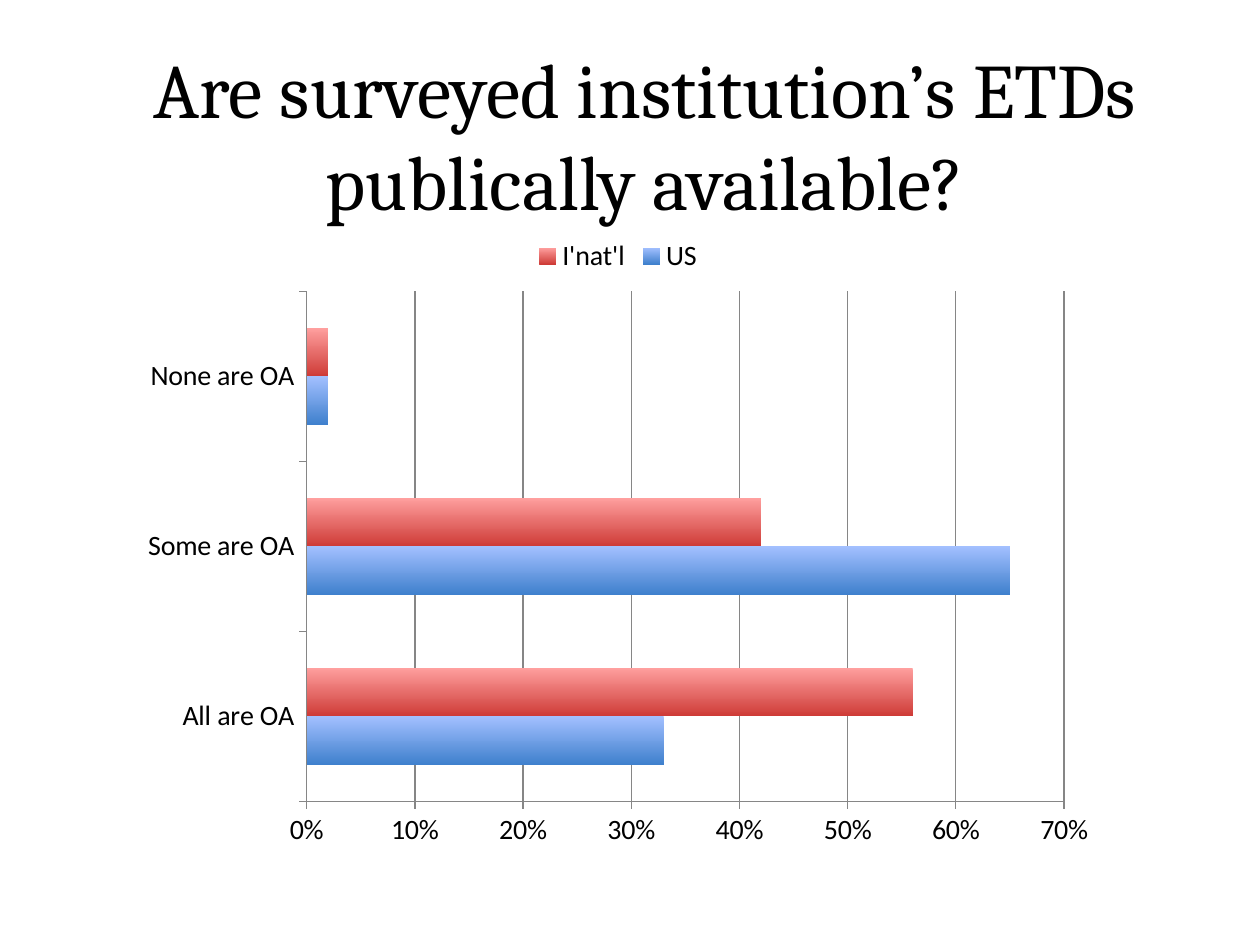
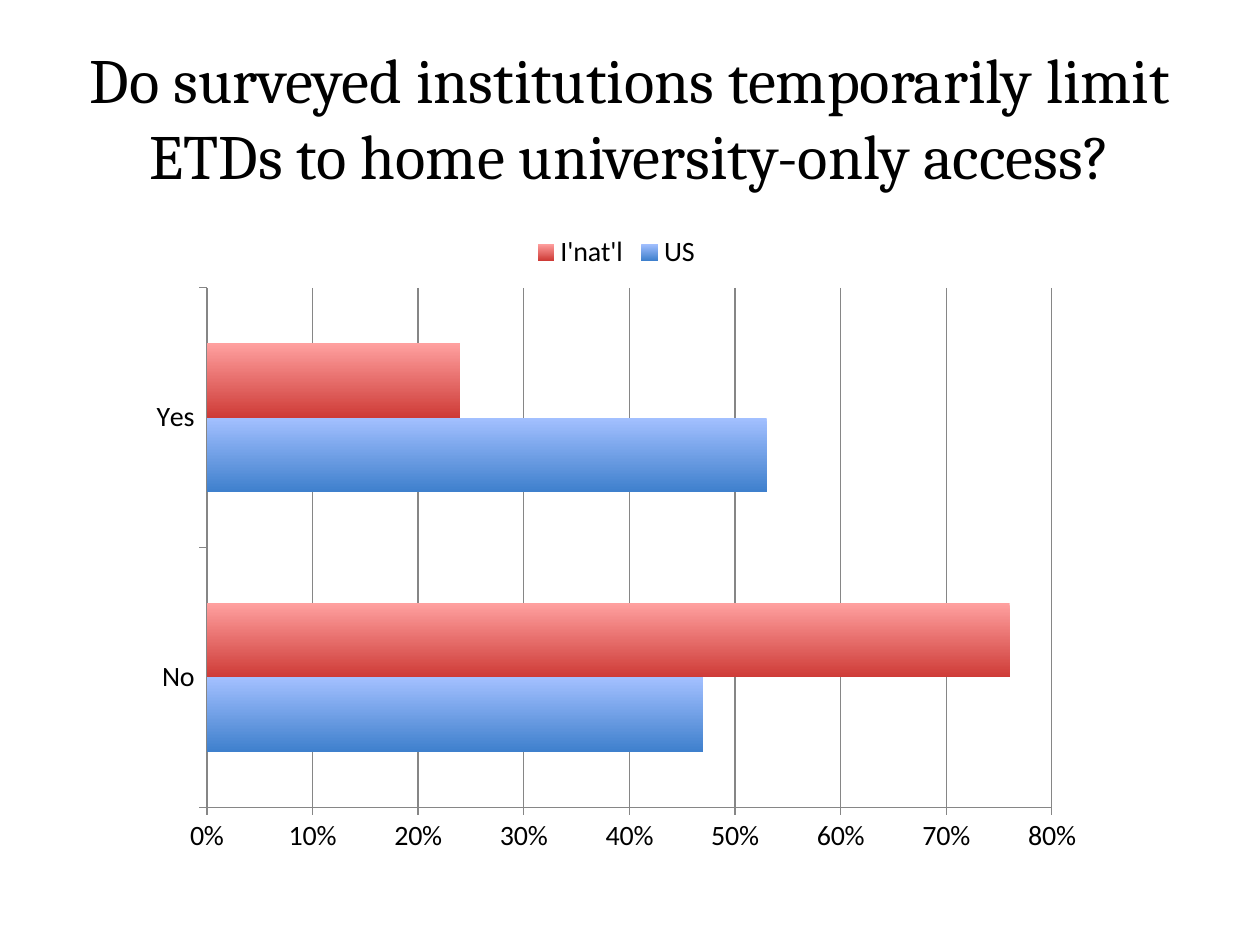
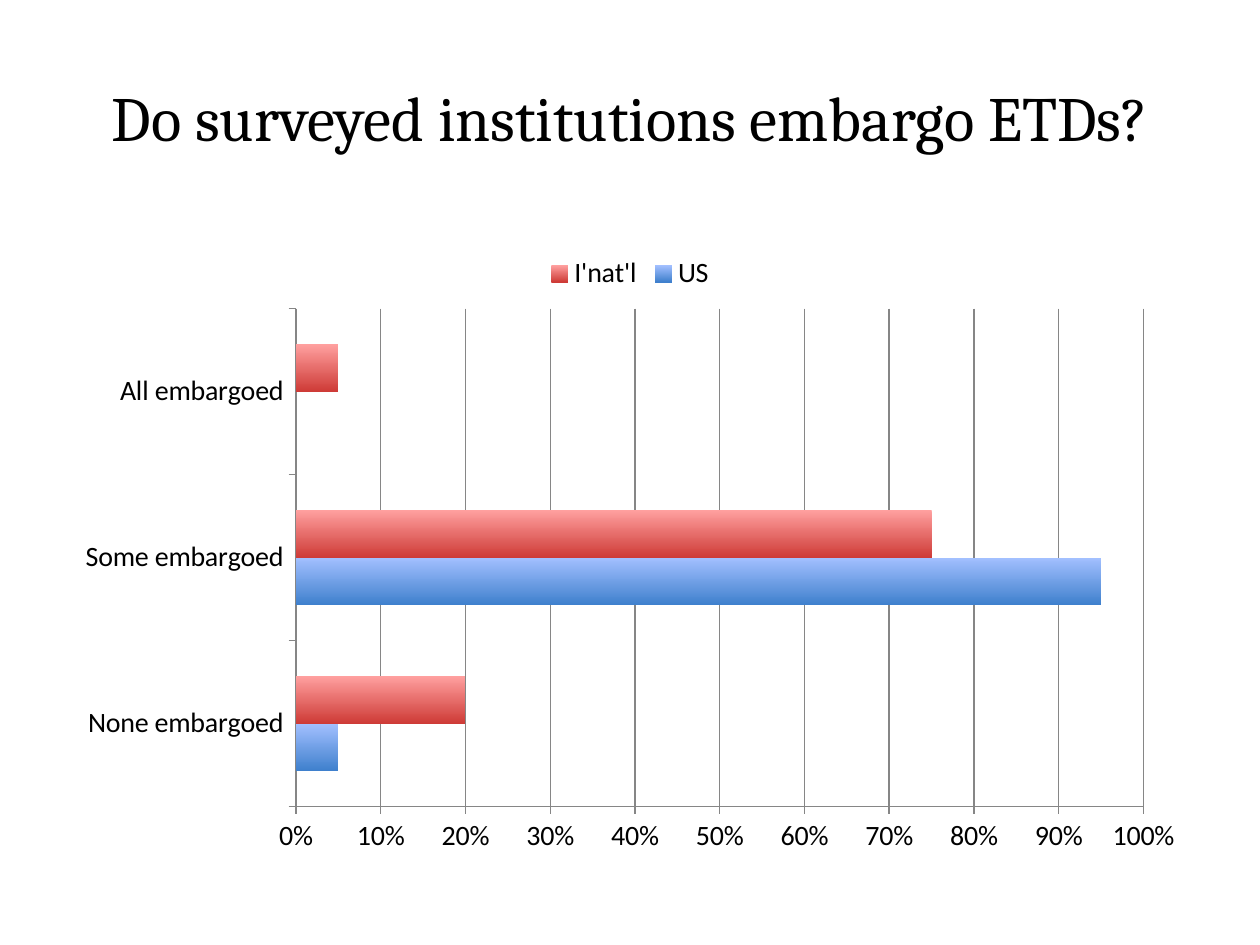
from dataclasses import dataclass

from pptx import Presentation
from pptx import util as u
from pptx.chart.data import CategoryChartData
from pptx.dml.color import RGBColor
from pptx.enum import chart as ch
from pptx.enum import text

PX = u.Inches(1) // 100
TITLE_ONLY = 5


@dataclass(frozen=True)
class Theme:
    ink: str = "000000"
    axis: str = "868686"
    us: tuple = ("A3C0FF", "3F80CD")
    international: tuple = ("FFA09F", "CE3B37")
    title_font: str = "Cambria"
    chart_font: str = "Calibri"
    title_size: int = 36
    large_title_size: int = 44
    chart_size: int = 16
    axis_width: float = 0.75


def rgb(value):
    return RGBColor.from_string(value)


class SurveyDeck:
    """Holds the presentation, its style and the slide being filled."""

    def __init__(self, theme):
        self.theme = theme
        self.deck = Presentation()
        self.deck.slide_width = 1000 * PX
        self.deck.slide_height = 750 * PX
        self.page = None

    def add_page(self):
        layout = self.deck.slide_layouts[TITLE_ONLY]
        self.page = self.deck.slides.add_slide(layout)

    def title(self, wording, size, box):
        title = self.page.shapes.title
        title.left, title.top, title.width, title.height = (n * PX for n in box)
        frame = title.text_frame
        frame.text = wording
        frame.word_wrap = True
        frame.auto_size = text.MSO_AUTO_SIZE.NONE
        frame.vertical_anchor = text.MSO_ANCHOR.MIDDLE
        para = frame.paragraphs[0]
        para.alignment = text.PP_ALIGN.CENTER
        self.style_font(para.font, self.theme.title_font, size)

    def bar_chart(self, box, answers, maximum):
        """Draw answers, a mapping of answer to (US, international) shares."""
        data = CategoryChartData(number_format="0%")
        data.categories = list(answers)
        us, international = zip(*answers.values())
        data.add_series("US", us)
        data.add_series("I'nat'l", international)
        chart = self.page.shapes.add_chart(
            ch.XL_CHART_TYPE.BAR_CLUSTERED, *(n * PX for n in box), data
        ).chart

        self.style_font(chart.font, self.theme.chart_font, self.theme.chart_size)
        chart.has_title = False
        chart.has_legend = True
        chart.legend.position = ch.XL_LEGEND_POSITION.TOP
        chart.legend.include_in_layout = False

        plot = chart.plots[0]
        plot.gap_width = 150
        plot.overlap = 0
        plot.vary_by_categories = False
        for series, colours in zip(plot.series, (self.theme.us, self.theme.international)):
            self.shade(series.format.fill, colours)
            series.format.line.fill.background()

        for axis in (chart.category_axis, chart.value_axis):
            axis.major_tick_mark = ch.XL_TICK_MARK.OUTSIDE
            axis.minor_tick_mark = ch.XL_TICK_MARK.NONE
            self.style_line(axis.format.line)
        chart.category_axis.has_major_gridlines = False
        shares = chart.value_axis
        shares.minimum_scale, shares.maximum_scale = 0, maximum
        shares.major_unit = 0.1
        shares.has_major_gridlines = True
        self.style_line(shares.major_gridlines.format.line)
        shares.tick_labels.number_format = "0%"
        shares.tick_labels.number_format_is_linked = False

    def style_font(self, font, name, size):
        font.name = name
        font.size = u.Pt(size)
        font.bold = False
        font.color.rgb = rgb(self.theme.ink)

    def style_line(self, line):
        line.color.rgb = rgb(self.theme.axis)
        line.width = u.Pt(self.theme.axis_width)

    def shade(self, fill, colours):
        """Fill with a gradient that runs from top to bottom."""
        fill.gradient()
        fill.gradient_angle = 270
        for stop, colour in zip(fill.gradient_stops, colours):
            stop.color.rgb = rgb(colour)


def main():
    theme = Theme()
    survey = SurveyDeck(theme)
    title_box = (50, 30, 900, 125)

    survey.add_page()
    survey.title(
        "Are surveyed institution’s ETDs publically available?",
        theme.large_title_size,
        (50, 75, 924, 62),
    )
    survey.bar_chart(
        (102, 178, 777, 505),
        {"All are OA": (0.33, 0.56), "Some are OA": (0.65, 0.42), "None are OA": (0.02, 0.02)},
        maximum=0.7,
    )

    survey.add_page()
    survey.title(
        "Do surveyed institutions temporarily limit ETDs to home university-only access?",
        theme.title_size,
        title_box,
    )
    survey.bar_chart(
        (109, 175, 760, 513), {"No": (0.47, 0.76), "Yes": (0.53, 0.24)}, maximum=0.8
    )

    survey.add_page()
    survey.title("Do surveyed institutions embargo ETDs?", theme.title_size, title_box)
    survey.bar_chart(
        (50, 192, 900, 495),
        {
            "None embargoed": (0.05, 0.2),
            "Some embargoed": (0.95, 0.75),
            "All embargoed": (0, 0.05),
        },
        maximum=1,
    )

    survey.deck.save("out.pptx")


if __name__ == "__main__":
    main()
